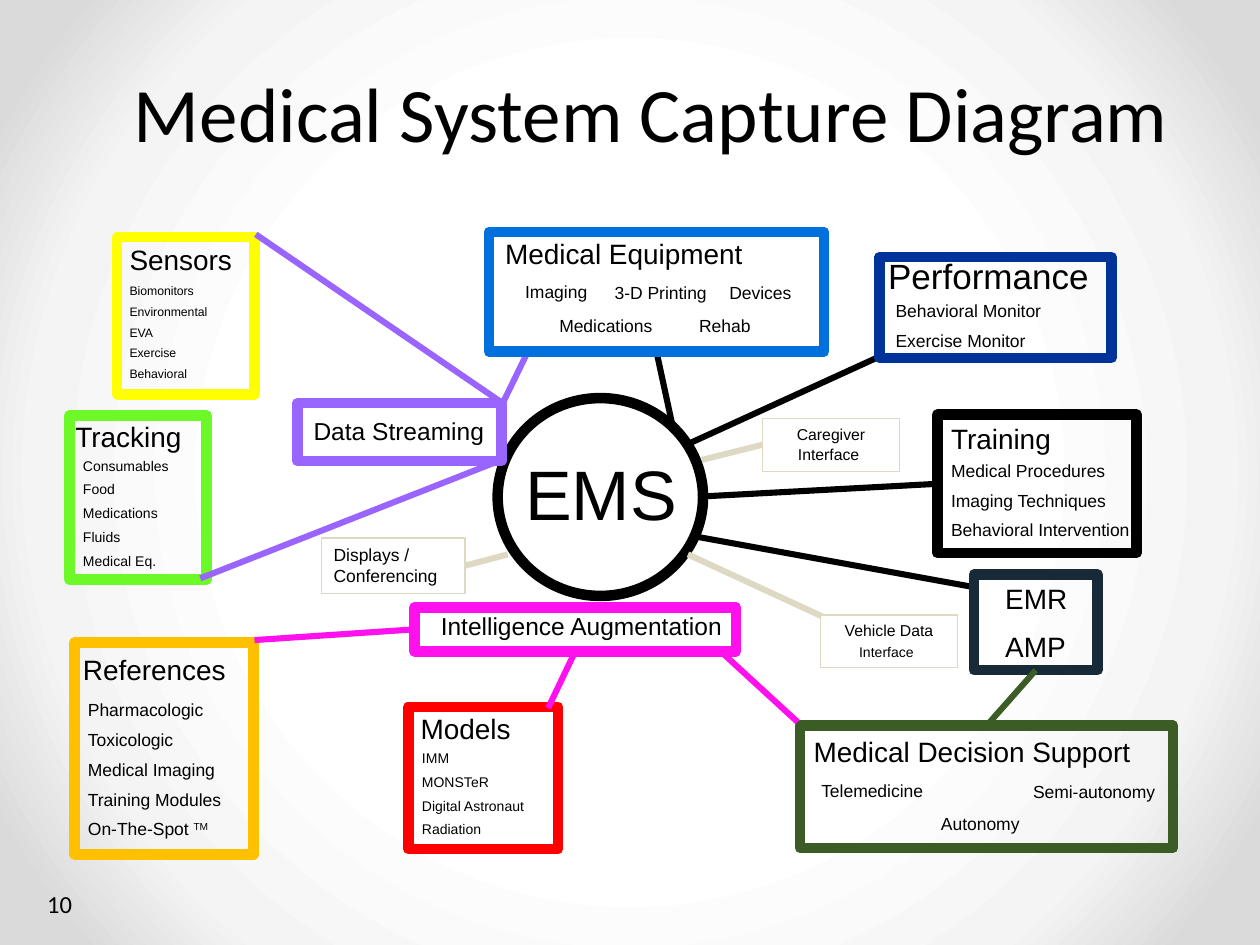
from lxml.etree import SubElement
from pptx import Presentation
from pptx.dml.color import RGBColor
from pptx.enum.shapes import MSO_CONNECTOR, MSO_SHAPE
from pptx.enum.text import MSO_ANCHOR, MSO_AUTO_SIZE, PP_ALIGN
from pptx.oxml import parse_xml
from pptx.oxml.ns import nsdecls, qn
from pptx.util import Inches, Pt

COLUMNS, ROWS = 100, 75
WIDTH, HEIGHT = Inches(10), Inches(7.5)
COLOURS = {
    "black": "000000", "slate": "182938", "red": "FF0000", "amber": "FFC000",
    "lime": "6DF927", "yellow": "FFFF00", "navy": "003399", "violet": "9A64FF",
    "forest": "3C5C26", "magenta": "FF11EE", "sand": "DDD9C3", "azure": "0070DC",
    "centre": "FFFFFF", "middle": "F4F4F4", "edge": "DADADA",
}


def rgb(colour):
    """Return the named colour."""
    return RGBColor.from_string(COLOURS[colour])


def grid(*lengths):
    """Turn alternating columns and rows into slide lengths."""
    units = (WIDTH / COLUMNS, HEIGHT / ROWS)
    return [round(length * units[i % 2]) for i, length in enumerate(lengths)]


def write(frame, lines, size, font="Arial", align=None, spaced=True):
    """Write lines, each a string or a tuple of (text, size, baseline) runs."""
    for number, line in enumerate(lines):
        paragraph = frame.paragraphs[0] if number == 0 else frame.add_paragraph()
        paragraph.alignment = align
        if spaced:
            before = SubElement(paragraph._p.get_or_add_pPr(), qn("a:spcBef"))
            SubElement(before, qn("a:spcPct")).set("val", "50000")
        runs = ((line, size, 0),) if isinstance(line, str) else line
        for text, run_size, baseline in runs:
            run = paragraph.add_run()
            run.text = text
            run.font.name, run.font.size = font, Pt(run_size)
            run.font.color.rgb = rgb("black")
            if baseline:
                run.font._element.set("baseline", str(baseline * 1000))


def label(slide, box, lines, size, wrap=False):
    """Place a growing text box."""
    frame = slide.shapes.add_textbox(*grid(*box)).text_frame
    frame.word_wrap, frame.auto_size = wrap, MSO_AUTO_SIZE.SHAPE_TO_FIT_TEXT
    write(frame, lines, size)


def outline(slide, box, kind, colour, weight=6):
    """Place an unfilled, outlined shape."""
    shape = slide.shapes.add_shape(kind, *grid(*box))
    shape.shadow.inherit = False
    shape.fill.background()
    shape.line.color.rgb, shape.line.width = rgb(colour), Pt(weight)
    return shape


def panel(slide, box, colour, *labels, kind=MSO_SHAPE.FLOWCHART_PROCESS):
    """Place a framed panel with labels offset from its corner."""
    frame = outline(slide, box, kind, colour)
    for (right, down, width, height), *content in labels:
        label(slide, (box[0] + right, box[1] + down, width, height), *content)
    return frame


def interface(slide, box, line, align=PP_ALIGN.CENTER):
    """Place a thin interface box."""
    shape = outline(slide, box, MSO_SHAPE.RECTANGLE, "sand", 0.75)
    frame = shape.text_frame
    frame.word_wrap, frame.vertical_anchor = True, MSO_ANCHOR.TOP
    frame.auto_size = MSO_AUTO_SIZE.SHAPE_TO_FIT_TEXT
    write(frame, [line], 10, align=align)
    return shape


def link(slide, colour, ends, start=None, finish=None):
    """Draw a link, joined to (shape, side) pairs where given."""
    line = slide.shapes.add_connector(MSO_CONNECTOR.STRAIGHT, *grid(*ends))
    line.line.color.rgb, line.line.width = rgb(colour), Pt(3.5)
    SubElement(line._element.spPr, qn("a:effectLst"))
    if start:
        line.begin_connect(*start)
    if finish:
        line.end_connect(*finish)


def background(slide):
    """Fill the slide with a radial gradient."""
    stops = "".join(
        f'<a:gs pos="{share}000"><a:srgbClr val="{COLOURS[name]}"/></a:gs>'
        for share, name in ((50, "centre"), (76, "middle"), (92, "edge")))
    centre = " ".join(f'{side}="50000"' for side in "ltrb")
    slide._element.cSld.insert(0, parse_xml(
        f'<p:bg {nsdecls("p", "a")}><p:bgPr><a:gradFill rotWithShape="1">'
        f'<a:gsLst>{stops}</a:gsLst><a:path path="circle"><a:fillToRect {centre}/>'
        '</a:path></a:gradFill><a:effectLst/></p:bgPr></p:bg>'))


def heading(slide, box, text, size, align, anchor):
    """Place the title or the page number."""
    frame = slide.shapes.add_textbox(*grid(*box)).text_frame
    frame.word_wrap, frame.vertical_anchor = True, anchor
    write(frame, [text], size, "Calibri", align, spaced=False)


def cards(slide):
    """Place the list cards and return those that links join."""
    training = panel(
        slide, (74.4, 32.9, 15.8, 11), "black",
        ((0.1, 0.1, 10, 3.7), ["Training"], 16),
        ((0.1, 3.1, 16.3, 7.7),
         ["Medical Procedures", "Imaging Techniques", "Behavioral Intervention"], 10))
    records = panel(slide, (77.3, 45.6, 9.8, 7.6), "slate",
                    ((1.5, 0.1, 7, 7.7), ["EMR", "AMP"], 16))
    panel(slide, (32.4, 56.1, 11.9, 11.3), "red",
          ((0, -0.1, 9.2, 3.7), ["Models"], 16),
          ((0.1, 2.9, 11.9, 8.4),
           ["IMM", "MONSTeR", "Digital Astronaut", "Radiation"], 8, True))
    panel(slide, (5.9, 51, 14.2, 16.8), "amber",
          ((-0.3, 0.3, 13.5, 3.7), ["References"], 16),
          ((0.1, 4, 12.7, 12.8),
           ["Pharmacologic", "Toxicologic", "Medical Imaging", "Training Modules",
            (("On-The-Spot ", 10, 0), ("TM", 10, 30))], 10))
    panel(slide, (5.5, 33, 10.9, 13), "lime",
          ((-0.5, -0.2, 10.5, 3.7), ["Tracking"], 16),
          ((0.1, 2.8, 8.9, 10.4),
           ["Consumables", "Food", "Medications", "Fluids", "Medical Eq."], 8))
    panel(slide, (9.3, 18.8, 10.9, 12.5), "yellow",
          ((0, 0, 12.3, 3.7), ["Sensors"], 16, True),
          ((0, 3.2, 8.3, 9.3),
           ["Biomonitors", "Environmental", "EVA", "Exercise", "Behavioral"], 7),
          kind=MSO_SHAPE.RECTANGLE)
    panel(slide, (69.8, 20.4, 18.4, 8), "navy",
          ((-0.3, -0.7, 18.1, 4.4), ["Performance"], 20),
          ((0.3, 2.9, 13.7, 5.2), ["Behavioral Monitor", "Exercise Monitor"], 10))
    return training, records


def wide_panels(slide):
    """Place the wide panels and return those that links join."""
    panel(slide, (23.6, 32, 16.2, 4.6), "violet",
          ((0.3, 0.5, 15.6, 3.4), ["Data Streaming"], 14))
    panel(slide, (38.8, 18.4, 26.6, 9.5), "azure",
          ((0.3, -0.1, 21.1, 3.7), ["Medical Equipment"], 16),
          ((1.9, 3.4, 7, 2.7), ["Imaging"], 10),
          ((9, 3.5, 9.4, 2.8), ["3-D Printing"], 10),
          ((18.1, 3.5, 7, 2.7), ["Devices"], 10),
          ((4.6, 6.1, 9.5, 2.7), ["Medications"], 10),
          ((15.7, 6.1, 6.1, 2.7), ["Rehab"], 10))
    support = panel(slide, (63.5, 57.6, 29.6, 9.7), "forest",
                    ((0.1, 0.2, 27.4, 3.7), ["Medical Decision Support"], 16),
                    ((0.7, 3.8, 10.3, 2.7), ["Telemedicine"], 10),
                    ((10.2, 6.4, 8.3, 2.8), ["Autonomy"], 10),
                    ((17.5, 3.9, 11.8, 2.7), ["Semi-autonomy"], 10))
    augmentation = panel(slide, (32.9, 48.2, 25.5, 3.5), "magenta",
                         ((1.1, -0.2, 24.4, 3.4), ["Intelligence Augmentation"], 14))
    return support, augmentation


def diagram(slide):
    """Place the hub, its panels and the links between them."""
    for ends in ((77.3, 46.6, 55.3, 42.6), (69.8, 28.3, 54.7, 35.2),
                 (53.4, 33.9, 52.1, 27.9)):
        link(slide, "black", ends)
    training, records = cards(slide)
    panel(slide, (39.5, 31.6, 16.3, 15.7), "black",
          ((1.2, 3.7, 14.3, 7.8), ["EMS"], 40), kind=MSO_SHAPE.OVAL)
    for ends in ((39.8, 36.5, 15.9, 45.9), (39.9, 32, 20.3, 18.6),
                 (39.9, 32, 41.8, 28.1)):
        link(slide, "violet", ends)
    support, augmentation = wide_panels(slide)
    displays = interface(slide, (25.5, 42.7, 11.4, 4.4),
                         "Displays / Conferencing", PP_ALIGN.LEFT)
    caregiver = interface(slide, (60.5, 33.2, 10.9, 4.2),
                          (("Caregiver Interface", 9, 0), (" ", 10, 0)))
    interface(slide, (65.1, 48.8, 10.9, 4.2),
              (("Vehicle Data ", 9, 0), ("Interface", 8, 0), (" ", 10, 0)))
    link(slide, "black", (74.4, 38.4, 55.8, 39.4), (training, 1))
    link(slide, "forest", (78.3, 57.6, 82.3, 53.4), (support, 0), (records, 2))
    link(slide, "magenta", (32.9, 49.9, 20.2, 50.8), (augmentation, 1))
    link(slide, "magenta", (45.7, 51.7, 43.5, 56.2), (augmentation, 2))
    link(slide, "magenta", (57.2, 51.7, 63.3, 57.3))
    link(slide, "sand", (36.9, 44.9, 40.3, 44), (displays, 3))
    link(slide, "sand", (60.5, 35.3, 55.7, 36.5), (caregiver, 1))
    link(slide, "sand", (65.2, 48.9, 54.6, 44))


def main():
    """Build and save the slide."""
    deck = Presentation()
    deck.slide_width, deck.slide_height = WIDTH, HEIGHT
    slide = deck.slides.add_slide(deck.slide_layouts[6])
    background(slide)
    heading(slide, (1.7, 68.3, 5, 5.1), "10", 14, PP_ALIGN.RIGHT, MSO_ANCHOR.BOTTOM)
    diagram(slide)
    heading(slide, (6.7, 4.7, 90, 12.5), "Medical System Capture Diagram", 44,
            PP_ALIGN.CENTER, MSO_ANCHOR.TOP)
    deck.save("out.pptx")


if __name__ == "__main__":
    main()
